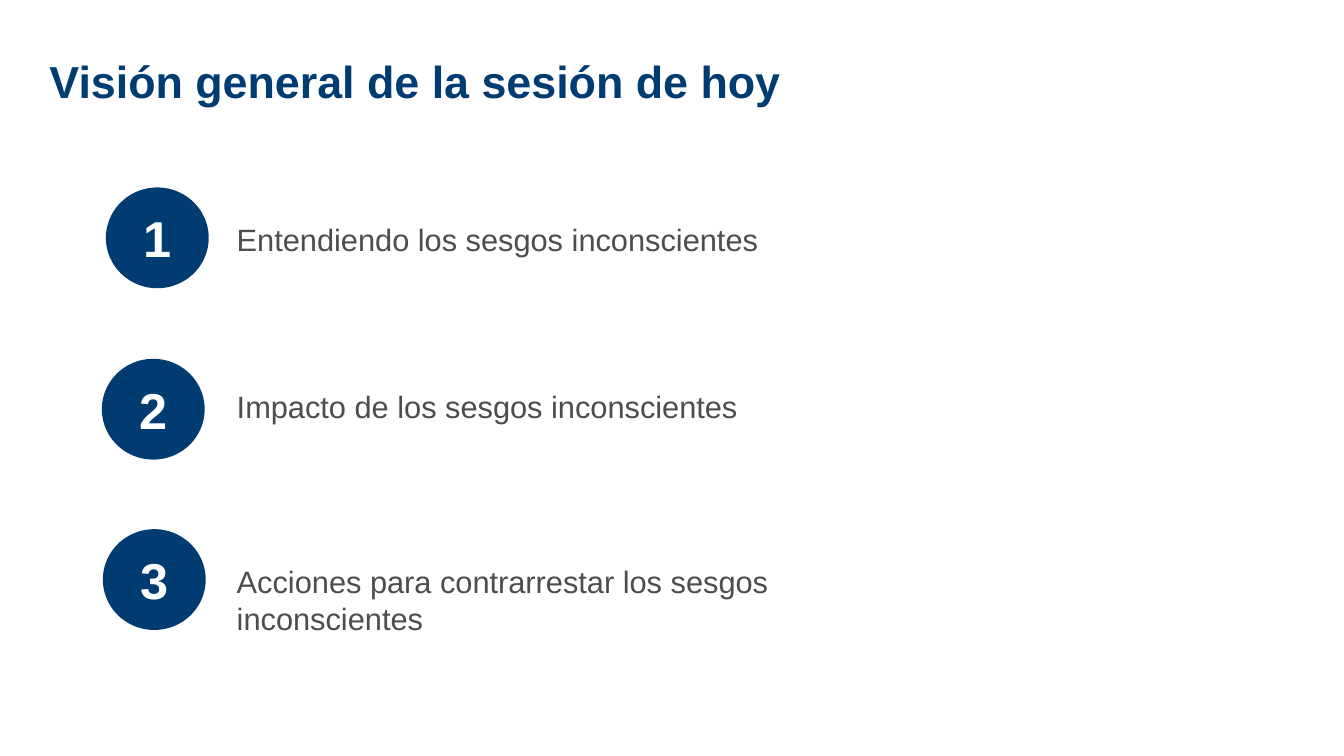
from dataclasses import dataclass

from pptx import Presentation
from pptx import util as u
from pptx.dml.color import RGBColor
from pptx.enum import shapes, text

FONT = "Arial"
TITLE_BLUE = "003B72"
CIRCLE_BLUE = "003C71"
GREY = "4D4D4D"
WHITE = "FFFFFF"


@dataclass
class AgendaItem:
    label: str
    circle_left: float
    circle_top: float
    label_top: float
    label_height: float


AGENDA = [
    AgendaItem("Entendiendo los sesgos inconscientes", 1.05, 1.86, 2.14, 0.47),
    AgendaItem("Impacto de los sesgos inconscientes", 1.01, 3.56, 3.8, 0.47),
    AgendaItem("Acciones para contrarrestar los sesgos inconscientes", 1.02, 5.25, 5.53, 0.84),
]


def color(hex_code: str) -> RGBColor:
    return RGBColor.from_string(hex_code)


def place(shape, left: float, top: float, width: float, height: float) -> None:
    shape.left, shape.top = u.Inches(left), u.Inches(top)
    shape.width, shape.height = u.Inches(width), u.Inches(height)


def write(shape, content: str, *, size: float, fill: str, bold: bool = False,
          align=text.PP_ALIGN.LEFT, anchor=text.MSO_ANCHOR.TOP,
          space_after: float = 0, line_spacing: float = 1.0) -> None:
    frame = shape.text_frame
    frame.word_wrap = True
    frame.vertical_anchor = anchor
    paragraph = frame.paragraphs[0]
    paragraph.alignment = align
    paragraph.space_before = u.Pt(0)
    paragraph.space_after = u.Pt(space_after)
    paragraph.line_spacing = line_spacing
    run = paragraph.add_run()
    run.text = content
    run.font.name = FONT
    run.font.size = u.Pt(size)
    run.font.bold = bold
    run.font.color.rgb = color(fill)


def add_text(parent, left: float, top: float, width: float, height: float,
             content: str, **formatting) -> None:
    box = parent.add_textbox(u.Inches(left), u.Inches(top), u.Inches(width), u.Inches(height))
    write(box, content, **formatting)
    box.text_frame.auto_size = text.MSO_AUTO_SIZE.SHAPE_TO_FIT_TEXT


def add_title(slide, content: str) -> None:
    title = slide.shapes.title
    place(title, 0.44, 0.4, 7.63, 0.86)
    frame = title.text_frame
    frame.margin_left = frame.margin_right = u.Inches(0.05)
    frame.margin_top = frame.margin_bottom = u.Inches(0.05)
    write(title, content, size=32, fill=TITLE_BLUE, bold=True,
          anchor=text.MSO_ANCHOR.MIDDLE, line_spacing=0.9)


def add_agenda_item(slide, number: int, item: AgendaItem) -> None:
    # Numbered circle
    badge = slide.shapes.add_group_shape()
    circle = badge.shapes.add_shape(
        shapes.MSO_SHAPE.OVAL, u.Inches(item.circle_left), u.Inches(item.circle_top),
        u.Inches(1.02), u.Inches(1))
    circle.shadow.inherit = False
    circle.fill.solid()
    circle.fill.fore_color.rgb = color(CIRCLE_BLUE)
    circle.line.fill.background()
    add_text(badge.shapes, item.circle_left + 0.08, item.circle_top + 0.15, 0.86, 0.71,
             str(number), size=36, fill=WHITE, bold=True, align=text.PP_ALIGN.CENTER)

    # Topic beside the circle
    add_text(slide.shapes, 2.25, item.label_top, 7.03, item.label_height,
             item.label, size=22, fill=GREY, space_after=4)


def main() -> None:
    presentation = Presentation()
    presentation.slide_width = u.Inches(13.33)
    presentation.slide_height = u.Inches(7.5)
    slide = presentation.slides.add_slide(presentation.slide_layouts[5])
    slide.background.fill.solid()
    slide.background.fill.fore_color.rgb = color(WHITE)

    add_title(slide, "Visión general de la sesión de hoy")
    for number, item in enumerate(AGENDA, start=1):
        add_agenda_item(slide, number, item)

    presentation.save("out.pptx")


if __name__ == "__main__":
    main()
